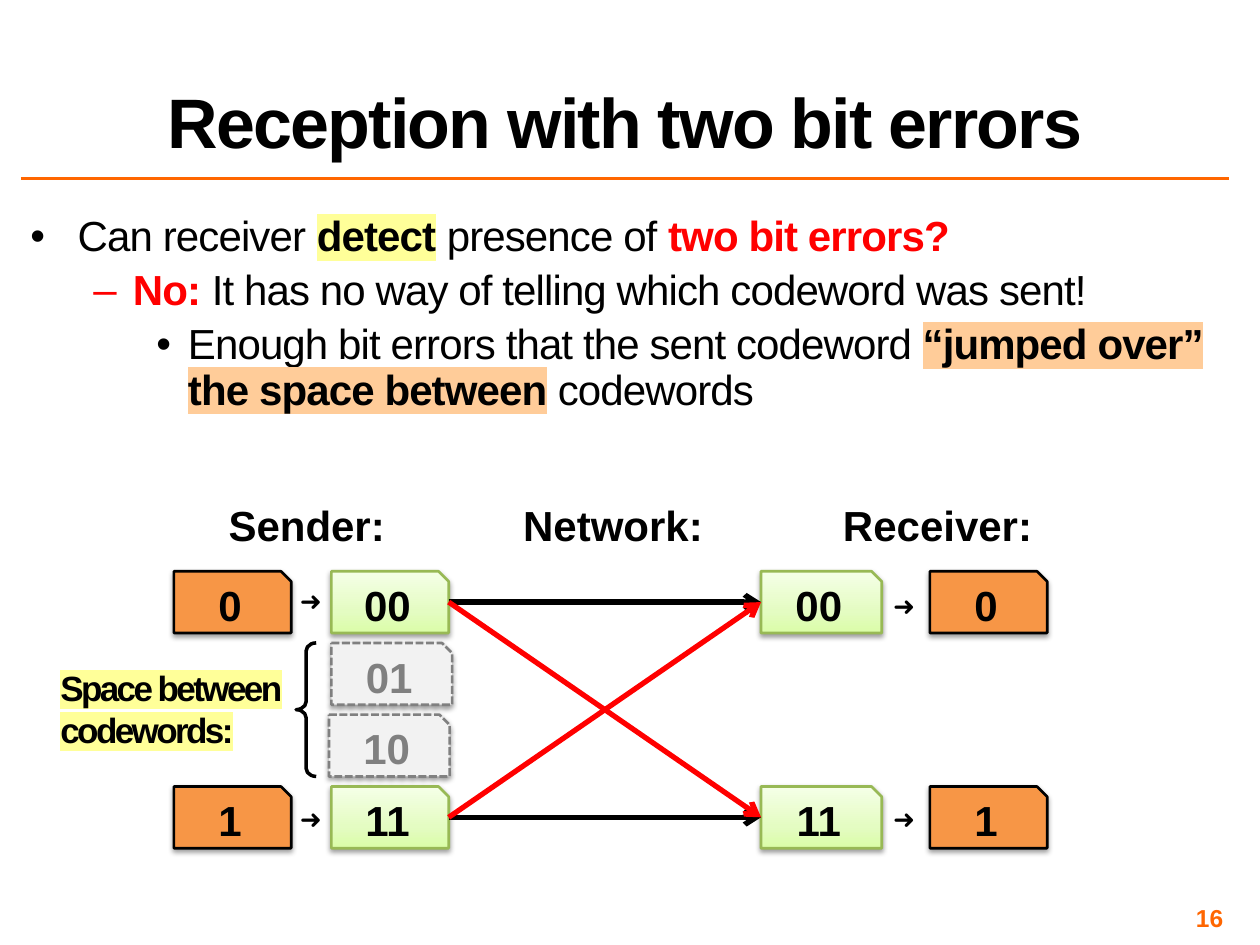
"""Build the slide on receiving codewords with two bit errors."""
from dataclasses import dataclass

from pptx import Presentation
from pptx.dml.color import RGBColor
from pptx.enum import dml, shapes, text
from pptx.oxml import parse_xml
from pptx.oxml.ns import nsdecls
from pptx.util import Pt


@dataclass
class Theme:
    black: str = "000000"
    red: str = "FF0000"
    accent: str = "FF6600"
    bit: str = "F79646"
    code_line: str = "98B955"
    unused: str = "F2F2F2"
    unused_line: str = "808080"
    yellow: str = "FFFF99"
    peach: str = "FFCC99"
    font: str = "Arial"
    arrow_font: str = "Courier New"
    title: int = 40
    main: int = 24
    small: int = 20
    number: int = 14


theme = Theme()
CODE_STOPS = ((0, "DAFDA7"), (35, "E4FCC2"), (100, "F5FFE7"))


def put(parent, tag, attributes="", inner=""):
    parent.append(parse_xml(f'<a:{tag} {nsdecls("a")} {attributes}>{inner}</a:{tag}>'))


def write(paragraph, words, size=theme.main, color=theme.black, bold=True,
          spacing=0, highlight=None, font=theme.font):
    run = paragraph.add_run()
    run.text = words
    run.font.size = Pt(size)
    run.font.bold = bold
    run.font.color.rgb = RGBColor.from_string(color)
    properties = run.font._element
    if spacing:
        properties.set("spc", str(int(spacing * 100)))
    if highlight:
        put(properties, "highlight", inner=f'<a:srgbClr val="{highlight}"/>')
    run.font.name = font


deck = Presentation()
deck.slide_width, deck.slide_height = Pt(720), Pt(540)
slide = deck.slides.add_slide(deck.slide_layouts[5])

title = slide.shapes.title
title.left, title.top, title.width, title.height = Pt(12), Pt(12), Pt(690), Pt(84)
title.text_frame.auto_size = text.MSO_AUTO_SIZE.NONE
title.text_frame.vertical_anchor = text.MSO_ANCHOR.BOTTOM
heading = title.text_frame.paragraphs[0]
heading.alignment = text.PP_ALIGN.CENTER
heading.line_spacing = 0.8
write(heading, "Reception with two bit errors", theme.title, spacing=-1)

rule = slide.shapes.add_connector(shapes.MSO_CONNECTOR.STRAIGHT, Pt(12), Pt(102), Pt(702), Pt(102))
rule.line.color.rgb = RGBColor.from_string(theme.accent)
rule.line.width = Pt(2)
put(rule._element.spPr, "effectLst")

points = (
    (27, -27, "•", (("Can receiver ", theme.black, False, None),
                    ("detect", theme.black, True, theme.yellow),
                    (" presence of ", theme.black, False, None),
                    ("two bit errors?", theme.red, True, None))),
    (58.5, -22.5, "–", (("No: ", theme.red, True, None),
                        ("It has no way of telling which codeword was sent!",
                         theme.black, False, None))),
    (90, -18, "•", (("Enough bit errors that the sent codeword ", theme.black, False, None),
                    ("“jumped over” the space between", theme.black, True, theme.peach),
                    (" codewords", theme.black, False, None))),
)
body = slide.shapes.add_textbox(Pt(14.4), Pt(120.2), Pt(687.6), Pt(155.5)).text_frame
body.word_wrap = True
body.margin_left = body.margin_right = body.margin_top = body.margin_bottom = Pt(3)
for level, (margin, indent, bullet, runs) in enumerate(points):
    point = body.paragraphs[0] if level == 0 else body.add_paragraph()
    point.level = level
    point.line_spacing = 0.9
    point.space_before = Pt(5)
    properties = point._p.get_or_add_pPr()
    properties.set("marL", str(Pt(margin)))
    properties.set("indent", str(Pt(indent)))
    put(properties, "buFont", f'typeface="{theme.font}"')
    put(properties, "buChar", f'char="{bullet}"')
    for words, color, bold, highlight in runs:
        write(point, words, color=color, bold=bold, spacing=-0.5, highlight=highlight)

number = slide.shapes.add_textbox(Pt(534.2), Pt(516.2), Pt(167.8), Pt(16.6)).text_frame
number.word_wrap = True
number.vertical_anchor = text.MSO_ANCHOR.MIDDLE
number.margin_left = number.margin_right = number.margin_top = number.margin_bottom = Pt(3)
number.paragraphs[0].alignment = text.PP_ALIGN.RIGHT
write(number.paragraphs[0], "16", theme.number, theme.accent)

labels = [(left, 282.2, width, 36, words, theme.main, theme.font) for left, width, words in (
    (118.8, 113, "Sender:"), (290.2, 120.2, "Network:"), (473.8, 123.8, "Receiver:"))]
labels += [(left, top, 32.4, 28.8, "➜", theme.small, theme.arrow_font) for left, top in (
    (161.3, 327.6), (161.3, 452.2), (500.4, 330.5), (500.4, 452.2))]
for left, top, width, height, words, size, font in labels:
    label = slide.shapes.add_textbox(Pt(left), Pt(top), Pt(width), Pt(height)).text_frame
    label.word_wrap = False
    label.paragraphs[0].alignment = text.PP_ALIGN.CENTER
    write(label.paragraphs[0], words, size, font=font)

FIRST_ROW, ROW_PITCH = 326.4, 41
cards = []
for row, bit, code in ((0, "0", "00"), (3, "1", "11")):
    cards += [("bit", 99.4, 67, row, bit), ("code", 189.4, 67, row, code),
              ("code", 434.9, 69, row, code), ("bit", 531.4, 67, row, bit)]
cards += [("unused", 189.4, 69, 1, "01"), ("unused", 188, 69, 2, "10")]

styles = {"bit": (theme.bit, theme.black, theme.black),
          "code": (None, theme.code_line, theme.black),
          "unused": (theme.unused, theme.unused_line, theme.unused_line)}
senders, receivers = {}, {}
for kind, left, width, row, digits in cards:
    fill, outline, ink = styles[kind]
    card = slide.shapes.add_shape(shapes.MSO_SHAPE.SNIP_1_RECTANGLE, Pt(left),
                                  Pt(FIRST_ROW + row * ROW_PITCH), Pt(width), Pt(35.3))
    if kind == "code":
        card.fill.gradient()
        card.fill.gradient_angle = 90
        stops = card._element.spPr.find(".//{*}gsLst")
        stops.clear()
        for position, color in CODE_STOPS:
            put(stops, "gs", f'pos="{position * 1000}"', f'<a:srgbClr val="{color}"/>')
        (senders if left < 360 else receivers)[digits] = card
    else:
        card.fill.solid()
        card.fill.fore_color.rgb = RGBColor.from_string(fill)
    card.line.color.rgb = RGBColor.from_string(outline)
    card.line.width = Pt(1.5)
    if kind == "unused":
        card.line.dash_style = dml.MSO_LINE.SQUARE_DOT
    card.shadow.inherit = False
    put(card._element.spPr.find("{*}effectLst"), "outerShdw",
        f'blurRad="{Pt(3.1)}" dist="{Pt(1.6)}" dir="5400000" rotWithShape="0"',
        f'<a:srgbClr val="{theme.black}"><a:alpha val="38000"/></a:srgbClr>')
    frame = card.text_frame
    frame.margin_top = frame.margin_bottom = 0
    frame.vertical_anchor = text.MSO_ANCHOR.MIDDLE
    frame.paragraphs[0].alignment = text.PP_ALIGN.CENTER
    write(frame.paragraphs[0], digits, color=ink)

for sent, received, color in (("00", "00", theme.black), ("11", "11", theme.black),
                              ("00", "11", theme.red), ("11", "00", theme.red)):
    route = slide.shapes.add_connector(shapes.MSO_CONNECTOR.STRAIGHT, 0, 0, 0, 0)
    route.begin_connect(senders[sent], 3)
    route.end_connect(receivers[received], 1)
    route.line.color.rgb = RGBColor.from_string(color)
    route.line.width = Pt(3)
    put(route.line._get_or_add_ln(), "tailEnd", 'type="arrow"')
    put(route._element.spPr, "effectLst")

gap_note = slide.shapes.add_textbox(Pt(27.4), Pt(377.3), Pt(141.8), Pt(55.4)).text_frame
gap_note.word_wrap = True
write(gap_note.paragraphs[0], "Space between", theme.small, spacing=-1.5, highlight=theme.yellow)
write(gap_note.add_paragraph(), "codewords:", theme.small, spacing=-1.5, highlight=theme.yellow)

brace = slide.shapes.add_shape(shapes.MSO_SHAPE.LEFT_BRACE, Pt(169.2), Pt(367.4), Pt(11.5), Pt(76.3))
brace.adjustments[0] = 0.4
brace.fill.background()
brace.line.color.rgb = RGBColor.from_string(theme.black)
brace.line.width = Pt(2)
brace.shadow.inherit = False

deck.save("out.pptx")
